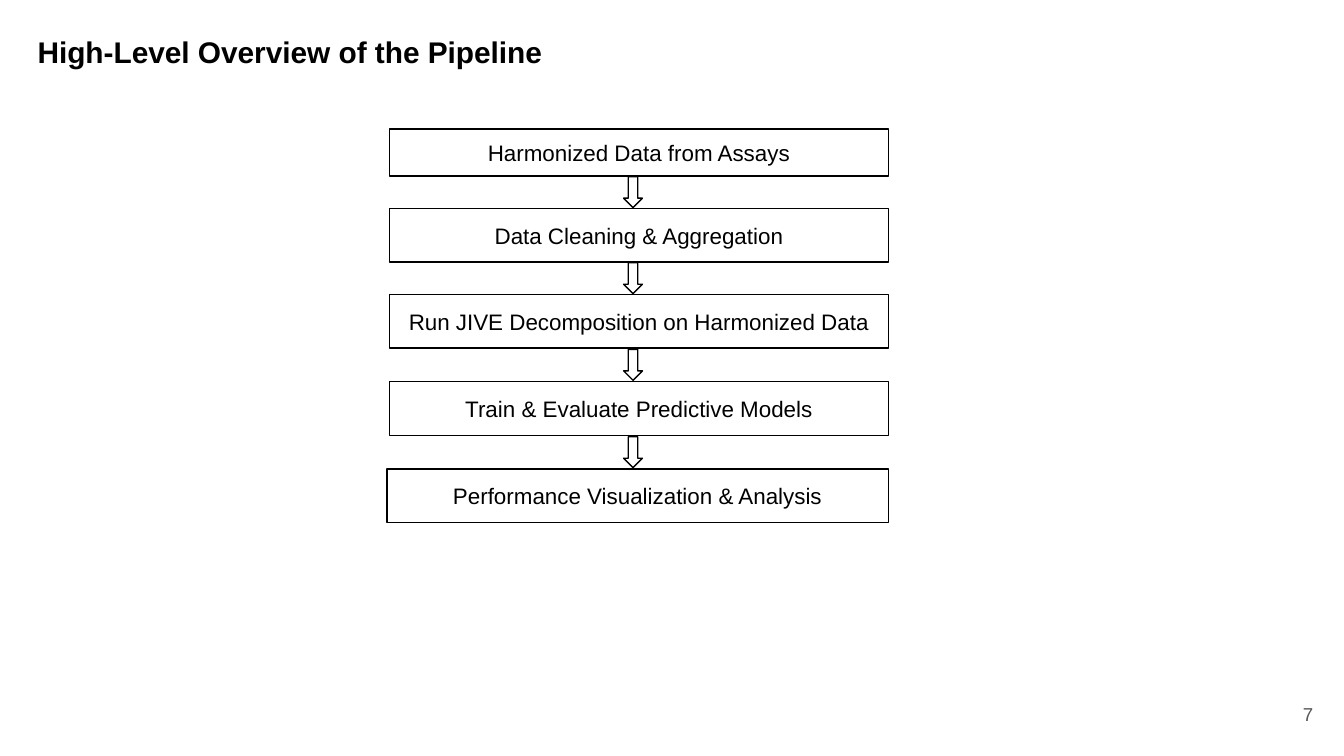
from dataclasses import dataclass
from itertools import pairwise

from pptx import Presentation
from pptx import util as u
from pptx.dml import color as c
from pptx.enum import shapes, text


@dataclass(frozen=True)
class Theme:
    font: str = "Arial"
    ink: str = "000000"
    muted: str = "595959"
    background: str = "FFFFFF"
    title_size: float = 16
    step_size: float = 12
    number_size: float = 10
    line_width: float = 0.75
    inset: float = 0.1


@dataclass(frozen=True)
class Box:
    left: float
    top: float
    width: float
    height: float

    @property
    def bottom(self) -> float:
        return self.top + self.height

    def lengths(self) -> tuple:
        return tuple(u.Inches(v) for v in (self.left, self.top, self.width, self.height))


@dataclass(frozen=True)
class Step:
    label: str
    box: Box


THEME = Theme()
SLIDE_WIDTH = 10
SLIDE_HEIGHT = SLIDE_WIDTH * 9 / 16
ARROW_LEFT, ARROW_WIDTH, ARROW_HEIGHT = 4.64, 0.14, 0.23
STEPS = [
    Step("Harmonized Data from Assays", Box(2.9, 0.96, 3.71, 0.35)),
    Step("Data Cleaning & Aggregation", Box(2.9, 1.55, 3.71, 0.4)),
    Step("Run JIVE Decomposition on Harmonized Data", Box(2.9, 2.19, 3.71, 0.4)),
    Step("Train & Evaluate Predictive Models", Box(2.9, 2.84, 3.71, 0.4)),
    Step("Performance Visualization & Analysis", Box(2.88, 3.49, 3.73, 0.4)),
]


def write_text(shape, content: str, size: float, color: str = THEME.ink,
               align=text.PP_ALIGN.LEFT, anchor=text.MSO_ANCHOR.MIDDLE,
               bold: bool = False) -> None:
    frame = shape.text_frame
    frame.word_wrap = True
    frame.auto_size = text.MSO_AUTO_SIZE.NONE
    frame.vertical_anchor = anchor
    frame.margin_left = frame.margin_right = u.Inches(THEME.inset)
    frame.margin_top = frame.margin_bottom = u.Inches(THEME.inset)
    paragraph = frame.paragraphs[0]
    paragraph.alignment = align
    run = paragraph.add_run()
    run.text = content
    run.font.name = THEME.font
    run.font.size = u.Pt(size)
    run.font.bold = bold
    run.font.color.rgb = c.RGBColor.from_string(color)


def add_outline(slide, kind: shapes.MSO_SHAPE, box: Box):
    shape = slide.shapes.add_shape(kind, *box.lengths())
    shape.shadow.inherit = False
    shape.fill.background()
    shape.line.color.rgb = c.RGBColor.from_string(THEME.ink)
    shape.line.width = u.Pt(THEME.line_width)
    return shape


def add_title(slide, content: str, box: Box) -> None:
    title = slide.shapes.title
    title.left, title.top, title.width, title.height = box.lengths()
    write_text(title, content, THEME.title_size,
               anchor=text.MSO_ANCHOR.TOP, bold=True)


def add_step(slide, step: Step) -> None:
    shape = add_outline(slide, shapes.MSO_SHAPE.RECTANGLE, step.box)
    write_text(shape, step.label, THEME.step_size, align=text.PP_ALIGN.CENTER)


def add_arrow_between(slide, upper: Step, lower: Step) -> None:
    top = (upper.box.bottom + lower.box.top - ARROW_HEIGHT) / 2
    box = Box(ARROW_LEFT, top, ARROW_WIDTH, ARROW_HEIGHT)
    add_outline(slide, shapes.MSO_SHAPE.DOWN_ARROW, box)


def main() -> None:
    presentation = Presentation()
    presentation.slide_width = u.Inches(SLIDE_WIDTH)
    presentation.slide_height = u.Inches(SLIDE_HEIGHT)
    slide = presentation.slides.add_slide(presentation.slide_layouts[5])
    slide.background.fill.solid()
    slide.background.fill.fore_color.rgb = c.RGBColor.from_string(THEME.background)

    add_title(slide, "High-Level Overview of the Pipeline", Box(0.18, 0.15, 9.32, 0.63))
    number = slide.shapes.add_textbox(*Box(9.27, 5.1, 0.6, 0.43).lengths())
    write_text(number, "7", THEME.number_size, THEME.muted, text.PP_ALIGN.RIGHT)

    for step in STEPS:
        add_step(slide, step)
    for upper, lower in pairwise(STEPS):
        add_arrow_between(slide, upper, lower)

    presentation.save("out.pptx")


if __name__ == "__main__":
    main()
